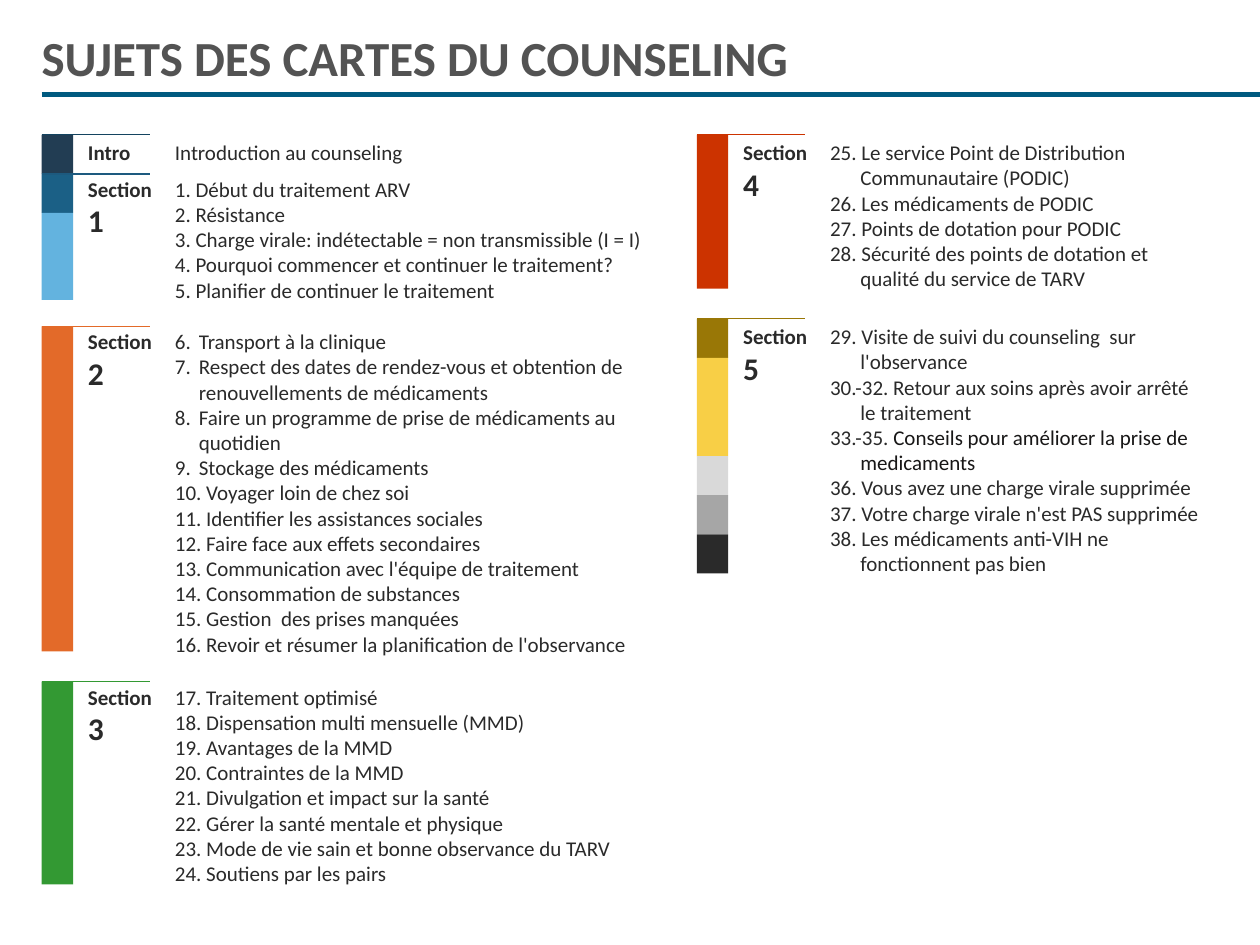
from pptx import Presentation
from pptx.dml.color import RGBColor
from pptx.enum.shapes import MSO_CONNECTOR, MSO_SHAPE
from pptx.enum.text import MSO_ANCHOR, MSO_AUTO_SIZE, PP_ALIGN
from pptx.oxml.ns import qn
from pptx.util import Inches, Pt

STRAIGHT = MSO_CONNECTOR.STRAIGHT
RECTANGLE = MSO_SHAPE.RECTANGLE
LEFT = PP_ALIGN.LEFT
MIDDLE = MSO_ANCHOR.MIDDLE
NO_FIT = MSO_AUTO_SIZE.NONE
GROW = MSO_AUTO_SIZE.SHAPE_TO_FIT_TEXT

WIDTH, HEIGHT = 10, 7.5
FONT = "Calibri"
COLORS = {
    "title": "535353", "header": "005A80", "text": "2A2A2A", "dark text": "181717",
    "navy": "223D53", "navy rule": "144460", "blue": "1B6086", "blue rule": "1D5A7F",
    "sky": "63B3DF", "orange": "E36A29", "green": "339933", "red": "CC3300",
    "olive": "997706", "yellow": "F8CF46", "light gray": "D9D9D9",
    "gray": "A6A6A6", "black": "2A2A2A",
}

# Column grid: left edge of the bars and width of the topic list
COLUMNS = {"left": (0.33, 0.95, 3.95), "right": (5.53, 0.96, 3.17)}
BAR_WIDTH, RULE_WIDTH = 0.25, 0.86
LABEL_OFFSET, LABEL_WIDTH = 0.26, 0.74
LINE_HEIGHT, PADDING = 0.2, 0.1
STEP = 0.31  # height of a small bar
FLAT, HANGING, WIDE_HANGING = (0.01, 0), (0.2, -0.19), (0.24, -0.24)

# column, rule top, text top, rule colour, label, number, bars, indent, topics
SECTIONS = [
    ("left", 1.07, 1.06, "navy rule", "Intro", "", [("navy", STEP)], FLAT,
     ["Introduction au counseling"]),
    ("left", 1.38, 1.35, "blue rule", "Section ", "1",
     [("blue", STEP), ("sky", 0.69)], FLAT,
     ["1. Début du traitement ARV",
      "2. Résistance",
      "3. Charge virale: indétectable = non transmissible (I = I)",
      "4. Pourquoi commencer et continuer le traitement?",
      "5. Planifier de continuer le traitement"]),
    ("left", 2.59, 2.56, "orange", "Section ", "2", [("orange", 2.58)], HANGING,
     ["6. \tTransport à la clinique",
      "7. \tRespect des dates de rendez-vous et obtention de "
      "renouvellements de médicaments",
      "8. \tFaire un programme de prise de médicaments au quotidien",
      "9. \tStockage des médicaments",
      "10. Voyager loin de chez soi",
      "11. Identifier les assistances sociales",
      "12. Faire face aux effets secondaires",
      "13. Communication avec l'équipe de traitement",
      "14. Consommation de substances",
      "15. Gestion  des prises manquées",
      "16. Revoir et résumer la planification de l'observance"]),
    ("left", 5.41, 5.38, "green", "Section ", "3", [("green", 1.61)], FLAT,
     ["17. Traitement optimisé",
      "18. Dispensation multi mensuelle (MMD)",
      "19. Avantages de la MMD",
      "20. Contraintes de la MMD",
      "21. Divulgation et impact sur la santé",
      "22. Gérer la santé mentale et physique",
      "23. Mode de vie sain et bonne observance du TARV",
      "24. Soutiens par les pairs"]),
    ("right", 1.07, 1.06, "red", "Section ", "4", [("red", 1.22)], WIDE_HANGING,
     ["25. Le service Point de Distribution Communautaire (PODIC)",
      "26. Les médicaments de PODIC",
      "27. Points de dotation pour PODIC",
      "28. Sécurité des points de dotation et qualité du service de TARV"]),
    ("right", 2.53, 2.52, "olive", "Section ", "5",
     [("olive", STEP), ("yellow", 0.78), ("light gray", STEP), ("gray", STEP),
      ("black", STEP)], WIDE_HANGING,
     ["29. Visite de suivi du counseling  sur l'observance",
      "30.-32. Retour aux soins après avoir arrêté le traitement",
      ("33.-35. ", "Conseils pour améliorer la prise de medicaments"),
      "36. Vous avez une charge virale supprimée",
      "37. Votre charge virale n'est PAS supprimée",
      "38. Les médicaments anti-VIH ne fonctionnent pas bien"]),
]


def color(name):
    return RGBColor.from_string(COLORS[name])


def add_span(para, text, size=12, tint="text", bold=False):
    span = para.add_run()
    span.text = text
    span.font.name = FONT
    span.font.size = Pt(size)
    span.font.bold = bold
    span.font.color.rgb = color(tint)


def add_rule(page, left, right, top, tint, weight):
    rule = page.shapes.add_connector(
        STRAIGHT, Inches(left), Inches(top), Inches(right), Inches(top))
    rule.line.color.rgb = color(tint)
    rule.line.width = Pt(weight)
    properties = rule._element.spPr
    properties.append(properties.makeelement(qn("a:effectLst"), {}))


def add_bars(page, left, top, bars):
    for tint, height in bars:
        bar = page.shapes.add_shape(
            RECTANGLE, Inches(left), Inches(top), Inches(BAR_WIDTH), Inches(height))
        bar.shadow.inherit = False
        bar.fill.solid()
        bar.fill.fore_color.rgb = color(tint)
        bar.line.fill.background()
        top += height


def add_text(page, left, top, width, lines, indent, paragraphs):
    """Each paragraph is a list of spans: (text, size, tint, bold)."""
    box = page.shapes.add_textbox(
        Inches(left), Inches(top), Inches(width),
        Inches(lines * LINE_HEIGHT + PADDING))
    frame = box.text_frame
    frame.word_wrap = True
    frame.auto_size = GROW
    for index, spans in enumerate(paragraphs):
        para = frame.paragraphs[0] if index == 0 else frame.add_paragraph()
        margin, first = indent
        properties = para._p.get_or_add_pPr()
        properties.set("marL", str(Inches(margin)))
        properties.set("indent", str(Inches(first)))
        for span in spans:
            add_span(para, *span)


def topic_spans(topic):
    if isinstance(topic, str):
        return [(topic,)]
    number, title = topic
    return [(number,), (title, 12, "dark text")]


def add_section(page, column, rule_top, text_top, tint, label, number, bars,
                indent, topics):
    left, list_offset, list_width = COLUMNS[column]
    add_bars(page, left, rule_top, bars)
    add_rule(page, left, left + RULE_WIDTH, rule_top, tint, 0.75)
    # Label, with its large number wrapping below
    heading = [(label, 12, "text", True)]
    if number:
        heading.append((number, 18, "text", True))
    add_text(page, left + LABEL_OFFSET, text_top, LABEL_WIDTH,
             2.5 if number else 1, FLAT, [heading])
    # Topics
    add_text(page, left + list_offset, text_top, list_width, len(topics), indent,
             [topic_spans(topic) for topic in topics])


def add_title(page, text):
    title = page.shapes.title
    title.left, title.top = Inches(0.33), Inches(0.16)
    title.width, title.height = Inches(9), Inches(0.59)
    frame = title.text_frame
    frame.margin_left = 0
    frame.auto_size = NO_FIT
    frame.vertical_anchor = MIDDLE
    para = frame.paragraphs[0]
    para.alignment = LEFT
    add_span(para, text, 28, "title", True)


def main():
    deck = Presentation()
    deck.slide_width, deck.slide_height = Inches(WIDTH), Inches(HEIGHT)
    page = deck.slides.add_slide(deck.slide_layouts.get_by_name("Title Only"))
    # Header
    add_rule(page, 0.33, WIDTH, 0.75, "header", 3)
    add_title(page, "SUJETS DES CARTES DU COUNSELING")
    # Sections in two columns
    for section in SECTIONS:
        add_section(page, *section)
    deck.save("out.pptx")


if __name__ == "__main__":
    main()
